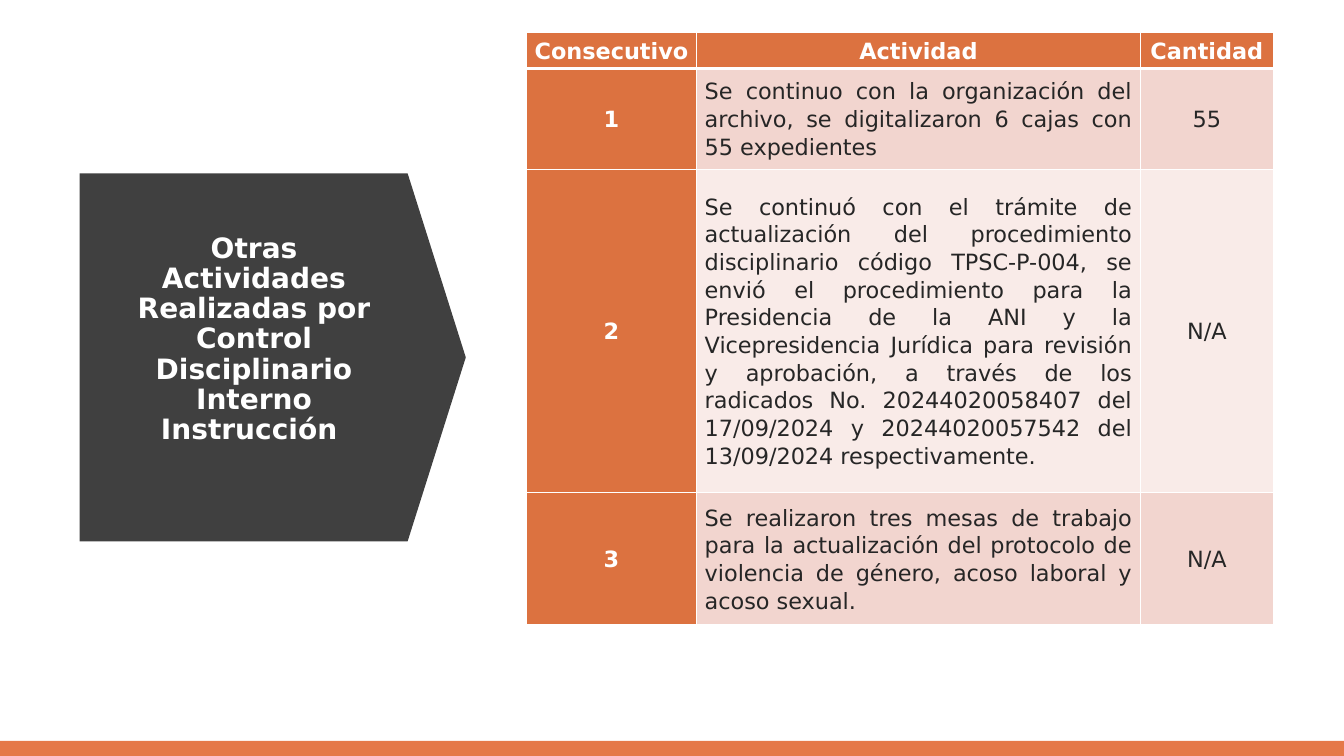
from dataclasses import dataclass

from lxml.etree import SubElement
from pptx import Presentation
from pptx.dml.color import RGBColor
from pptx.enum.shapes import MSO_SHAPE
from pptx.enum.text import MSO_ANCHOR, PP_ALIGN
from pptx.oxml.ns import qn
from pptx.shapes.autoshape import Shape
from pptx.slide import Slide
from pptx.table import _Cell as Cell
from pptx.text.text import TextFrame
from pptx.util import Inches, Pt

FONT = "DejaVu Sans"
WHITE = RGBColor(0xFF, 0xFF, 0xFF)
CHARCOAL = RGBColor(0x40, 0x40, 0x40)
INK = RGBColor(0x26, 0x26, 0x26)
FOOTER_ORANGE = RGBColor(0xE5, 0x78, 0x48)
TABLE_ORANGE = RGBColor(0xDC, 0x72, 0x40)
BAND_COLORS = (RGBColor(0xF2, 0xD5, 0xCF), RGBColor(0xF9, 0xEB, 0xE8))

TITLE = "Otras Actividades Realizadas por Control Disciplinario Interno Instrucción "
HEADERS = ("Consecutivo", "Actividad", "Cantidad")
COLUMN_WIDTHS = (1.69, 4.4, 1.32)
HEADER_HEIGHT = 0.36


@dataclass(frozen=True)
class Activity:
    description: str
    quantity: str
    height: float


@dataclass(frozen=True)
class Block:
    kind: MSO_SHAPE
    left: float
    top: float
    width: float
    height: float
    color: RGBColor
    rotation: float = 0


ACTIVITIES = (
    Activity(
        "Se continuo con la organización del archivo, se digitalizaron 6 cajas "
        "con 55 expedientes",
        "55",
        1,
    ),
    Activity(
        "Se continuó con el trámite de actualización del procedimiento "
        "disciplinario código TPSC-P-004, se envió el procedimiento para la "
        "Presidencia de la ANI y la Vicepresidencia Jurídica para revisión y "
        "aprobación, a través de los radicados No. 20244020058407 del "
        "17/09/2024 y 20244020057542 del 13/09/2024 respectivamente. ",
        "N/A",
        3.21,
    ),
    Activity(
        "Se realizaron tres mesas de trabajo para la actualización del "
        "protocolo de violencia de género, acoso laboral y acoso sexual. ",
        "N/A",
        1.31,
    ),
)
FOOTER = Block(MSO_SHAPE.RECTANGLE, 0, 7.35, 13.33, 0.15, FOOTER_ORANGE)
ARROW = Block(MSO_SHAPE.DOWN_ARROW, 0.88, 1.63, 3.65, 3.83, CHARCOAL, 270)


def add_block(slide: Slide, block: Block) -> Shape:
    shape = slide.shapes.add_shape(
        block.kind,
        Inches(block.left),
        Inches(block.top),
        Inches(block.width),
        Inches(block.height),
    )
    shape.rotation = block.rotation
    shape.shadow.inherit = False
    shape.fill.solid()
    shape.fill.fore_color.rgb = block.color
    shape.line.fill.background()
    return shape


def write_text(
    frame: TextFrame,
    text: str,
    size: float,
    color: RGBColor,
    bold: bool,
    alignment: PP_ALIGN,
    line_spacing: float,
) -> None:
    paragraph = frame.paragraphs[0]
    paragraph.alignment = alignment
    paragraph.line_spacing = line_spacing
    run = paragraph.add_run()
    run.text = text
    run.font.name = FONT
    run.font.size = Pt(size)
    run.font.bold = bold
    run.font.color.rgb = color


def add_title(slide: Slide) -> None:
    box = slide.shapes.add_textbox(
        Inches(1.08), Inches(2.36), Inches(2.88), Inches(2.79)
    )
    frame = box.text_frame
    frame.word_wrap = True
    frame.vertical_anchor = MSO_ANCHOR.MIDDLE
    frame.margin_top = 0
    frame.margin_bottom = Inches(0.77)
    write_text(frame, TITLE, 20, WHITE, True, PP_ALIGN.CENTER, 0.9)


def set_borders(cell: Cell, bottom_width: float) -> None:
    properties = cell._tc.get_or_add_tcPr()
    widths = {"a:lnL": 1, "a:lnR": 1, "a:lnT": 1, "a:lnB": bottom_width}
    for tag, width in widths.items():
        line = SubElement(properties, qn(tag), w=str(Pt(width)))
        fill = SubElement(line, qn("a:solidFill"))
        SubElement(fill, qn("a:srgbClr"), val=str(WHITE))


def fill_cell(
    cell: Cell,
    text: str,
    background: RGBColor,
    emphasized: bool,
    alignment: PP_ALIGN,
    bottom_width: float,
) -> None:
    cell.margin_left = cell.margin_right = Inches(0.08)
    cell.margin_top = cell.margin_bottom = 0
    cell.vertical_anchor = MSO_ANCHOR.MIDDLE
    set_borders(cell, bottom_width)
    cell.fill.solid()
    cell.fill.fore_color.rgb = background
    color = WHITE if emphasized else INK
    write_text(cell.text_frame, text, 16, color, emphasized, alignment, 1.07)


def add_activity_table(slide: Slide) -> None:
    rows = [HEADERS] + [
        (str(number), activity.description, activity.quantity)
        for number, activity in enumerate(ACTIVITIES, start=1)
    ]
    heights = [HEADER_HEIGHT] + [activity.height for activity in ACTIVITIES]
    table = slide.shapes.add_table(
        len(rows),
        len(HEADERS),
        Inches(5.22),
        Inches(0.32),
        Inches(sum(COLUMN_WIDTHS)),
        Inches(sum(heights)),
    ).table
    for column, width in zip(table.columns, COLUMN_WIDTHS):
        column.width = Inches(width)
    for row_index, (texts, height) in enumerate(zip(rows, heights)):
        table.rows[row_index].height = Inches(height)
        is_header = row_index == 0
        band = BAND_COLORS[(row_index - 1) % len(BAND_COLORS)]
        for column_index, text in enumerate(texts):
            emphasized = is_header or column_index == 0
            justified = column_index == 1 and not is_header
            fill_cell(
                table.cell(row_index, column_index),
                text,
                TABLE_ORANGE if emphasized else band,
                emphasized,
                PP_ALIGN.JUSTIFY if justified else PP_ALIGN.CENTER,
                3 if is_header else 1,
            )


def main() -> None:
    presentation = Presentation()
    presentation.slide_width = Inches(13.33)
    presentation.slide_height = Inches(7.5)
    slide = presentation.slides.add_slide(presentation.slide_layouts[6])
    add_block(slide, FOOTER)
    arrow = add_block(slide, ARROW)
    arrow.adjustments[0] = 1
    arrow.adjustments[1] = 0.158
    add_title(slide)
    add_activity_table(slide)
    presentation.save("out.pptx")


if __name__ == "__main__":
    main()
